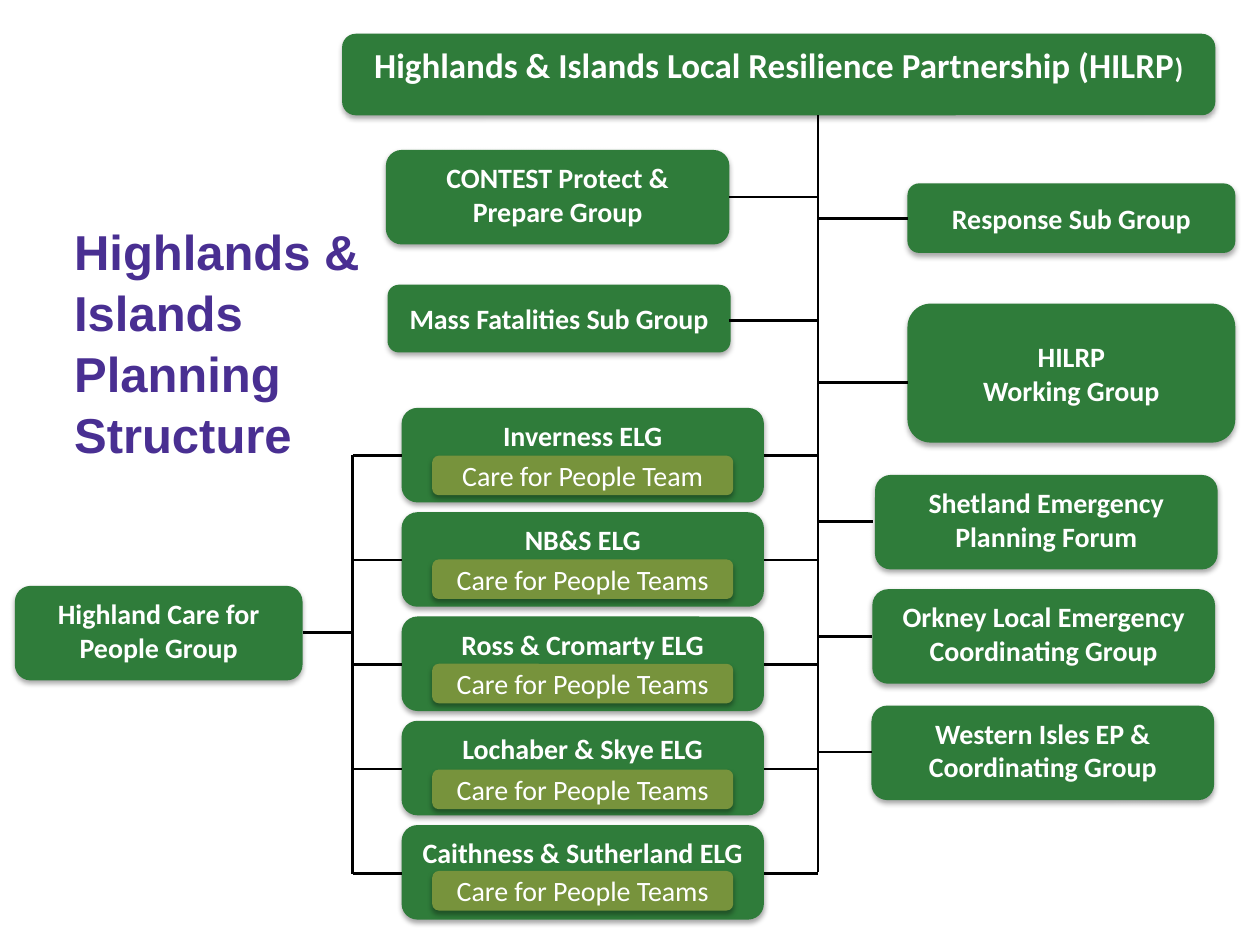
"""Organisation chart of the Highlands & Islands planning structure."""
import lxml.etree
import pptx
import pptx.dml.color
import pptx.enum.shapes
import pptx.enum.text
import pptx.oxml
import pptx.oxml.ns
import pptx.util

Pt = pptx.util.Pt
RGB = pptx.dml.color.RGBColor.from_string
MSO = pptx.enum.shapes.MSO_SHAPE
ANCHOR = pptx.enum.text.MSO_ANCHOR
ALIGN = pptx.enum.text.PP_ALIGN
COLORS = {"green": "2F7C3A", "olive": "77933C", "purple": "492F92",
          "white": "FFFFFF", "black": "000000"}
SHADOW = (
    f'<a:effectLst {pptx.oxml.ns.nsdecls("a")}>'
    '<a:outerShdw blurRad="39370" dist="22860" dir="5400000" rotWithShape="0">'
    f'<a:srgbClr val="{COLORS["black"]}"><a:alpha val="35000"/></a:srgbClr>'
    '</a:outerShdw></a:effectLst>')


def write(tf, text, size=16, font="Calibri", color="white", bold=True,
          align=ALIGN.CENTER, anchor=ANCHOR.TOP, wrap=True, spacing=None):
    tf.word_wrap = wrap
    tf.vertical_anchor = anchor
    for i, row in enumerate(text.split("\n")):
        p = tf.paragraphs[0] if i == 0 else tf.add_paragraph()
        p.alignment = align
        p.line_spacing = spacing
        p.font.size = Pt(size)
        p.font.name = font
        p.font.bold = bold
        p.font.color.rgb = RGB(COLORS[color])
        r = p.add_run()
        r.text = row
    return p


def line(x1, y1, x2, y2):
    cx = s.shapes.add_connector(pptx.enum.shapes.MSO_CONNECTOR.STRAIGHT,
                                Pt(x1), Pt(y1), Pt(x2), Pt(y2))
    cx.line.color.rgb = RGB(COLORS["black"])
    cx.line.width = Pt(1.5)
    lxml.etree.SubElement(cx._element.spPr, pptx.oxml.ns.qn("a:effectLst"))


prs = pptx.Presentation()
prs.slide_width, prs.slide_height = Pt(720), Pt(540)
s = prs.slides.add_slide(prs.slide_layouts[6])

top, mid = {}, {"anchor": ANCHOR.MIDDLE}
boxes = [
    ("Highlands & Islands Local Resilience Partnership (HILRP",
     195.5, 19.3, 499, 46.6, "green", {"size": 20}),
    ("CONTEST Protect & Prepare Group", 220.5, 85.7, 196.3, 54, "green", top),
    ("HILRP\nWorking Group", 518.6, 173.5, 187.3, 79.4, "green", mid),
    ("Response Sub Group", 518.6, 104.8, 187.3, 39.7, "green", mid),
    ("Mass Fatalities Sub Group", 221.5, 162.7, 196, 38.7, "green", mid),
    ("Highland Care for People Group", 8.5, 334.8, 164.4, 54, "green", top),
    ("Shetland Emergency Planning Forum", 500, 271.4, 195.8, 54, "green", top),
    ("Orkney Local Emergency Coordinating Group",
     498.5, 336.7, 195.8, 54, "green", top),
    ("Western Isles EP & Coordinating Group",
     498, 403.2, 195.8, 54, "green", top),
]
elgs = ["Inverness", "NB&S", "Ross & Cromarty", "Lochaber & Skye",
        "Caithness & Sutherland"]
team_tops = [260.4, 319.7, 379.3, 439.8, 497.7]
for i, (name, team_top) in enumerate(zip(elgs, team_tops)):
    team = "Care for People Team" + ("s" if i else "")
    boxes.append((f"{name} ELG", 229.5, 233.1 + 59.6 * i, 207, 54, "green", top))
    boxes.append((team, 247, team_top, 172, 22.6, "olive",
                  {"bold": False, **mid}))

for text, x, y, w, h, fill, fmt in boxes:
    sp = s.shapes.add_shape(MSO.ROUNDED_RECTANGLE, Pt(x), Pt(y), Pt(w), Pt(h))
    sp.fill.solid()
    sp.fill.fore_color.rgb = RGB(COLORS[fill])
    sp.line.fill.background()
    sp._element.spPr.append(pptx.oxml.parse_xml(SHADOW))
    p = write(sp.text_frame, text, **fmt)
    if "Partnership" in text:
        r = p.add_run()
        r.text = ")"
        r.font.size = Pt(16)

trunk, branch = 467.5, 201.6
line(trunk, 65.9, trunk, 498.5)
line(branch, 260.3, branch, 499.5)
line(172.9, 361.5, branch, 361.5)
for x, y in [(416.8, 112.5), (416.5, 183.1), (518.6, 124.7), (518.6, 218.7),
             (499, 298.2), (498.3, 363.6), (498.2, 429.8)]:
    line(trunk, y, x, y)
for i in range(5):
    y = 260.3 + 59.7 * i
    line(436.5, y, trunk, y)
    line(branch, y, 229.5, y)

tf = s.shapes.add_textbox(Pt(35.3), Pt(121.7), Pt(181.4), Pt(143.3)).text_frame
write(tf, "Highlands &\nIslands\nPlanning\nStructure", size=28, font="Arial",
      color="purple", align=ALIGN.LEFT, wrap=False, spacing=1.04)

prs.save("out.pptx")
